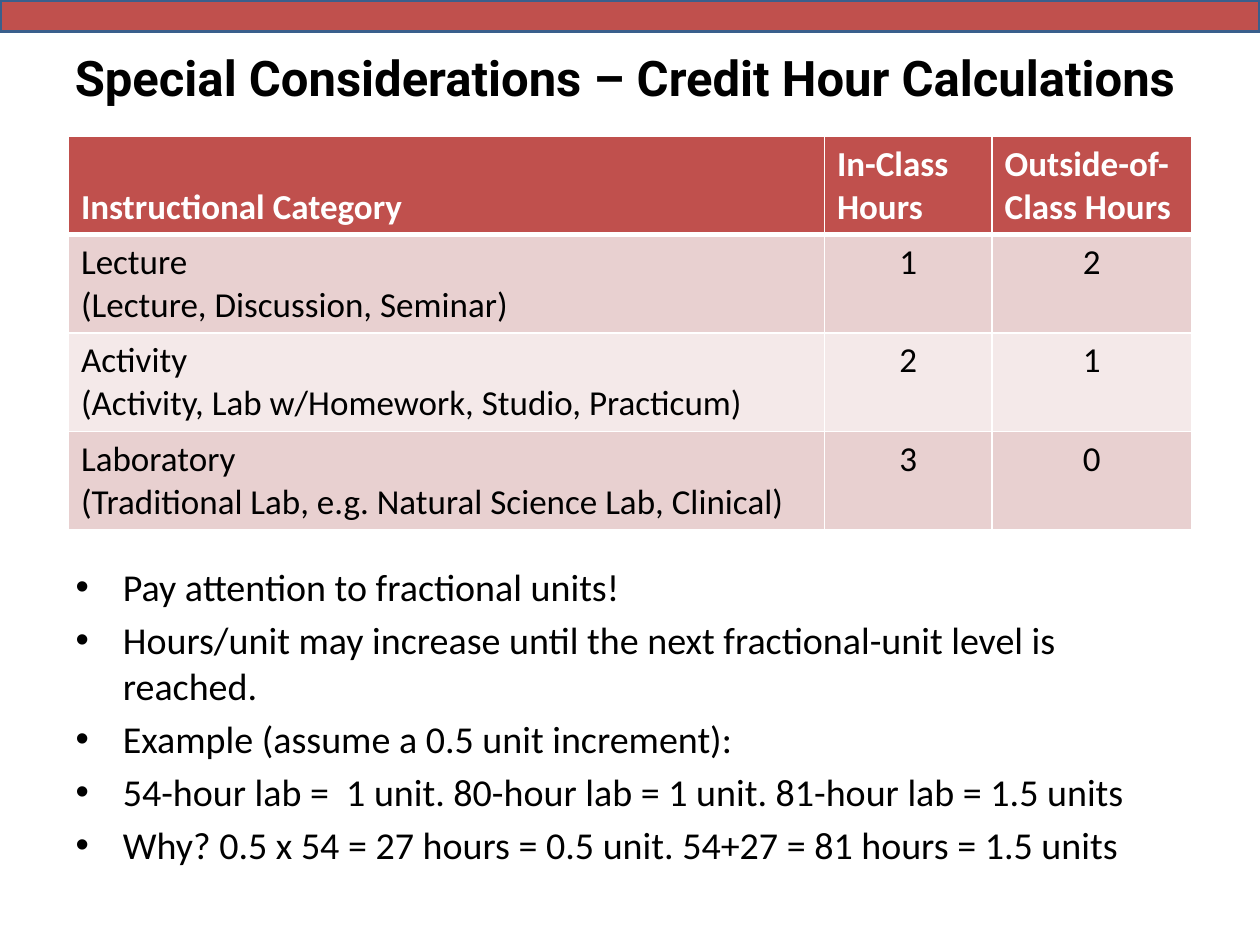
from dataclasses import dataclass

from lxml import etree
from pptx import Presentation
from pptx import util as u
from pptx.dml.color import RGBColor as Rgb
from pptx.enum import shapes, text
from pptx.oxml import ns


@dataclass(frozen=True)
class Theme:
    red: str = "C0504D"
    edge: str = "3A5F8C"
    dark: str = "E8D0D0"
    pale: str = "F4E9E9"
    ink: str = "000000"
    white: str = "FFFFFF"
    head: str = "Roboto"
    font: str = "Calibri"
    title: float = 28
    body: float = 21.7
    cell: float = 20


theme = Theme()


def style(frame, name, size, color, bold=False):
    """Format every run in a text frame."""
    for para in frame.paragraphs:
        for run in para.runs:
            font = run.font
            font.name, font.size, font.bold = name, u.Pt(size), bold
            font.color.rgb = Rgb.from_string(color)


def border(cell, side, width):
    """Draw one white cell edge; side is L, R, T or B."""
    line = etree.SubElement(cell._tc.get_or_add_tcPr(), ns.qn(f"a:ln{side}"),
                            w=str(u.Pt(width)))
    fill = etree.SubElement(line, ns.qn("a:solidFill"))
    etree.SubElement(fill, ns.qn("a:srgbClr"), val=theme.white)


deck = Presentation()
deck.slide_width, deck.slide_height = u.Cm(25.4), u.Cm(19.05)
slide = deck.slides.add_slide(deck.slide_layouts[1])

# Title
title = slide.shapes.title
title.left, title.top = u.Cm(0.43), u.Cm(0.76)
title.width, title.height = u.Cm(24.33), u.Cm(1.57)
frame = title.text_frame
frame.text = "Special Considerations – Credit Hour Calculations"
frame.auto_size = text.MSO_AUTO_SIZE.NONE
frame.vertical_anchor = text.MSO_ANCHOR.MIDDLE
frame.paragraphs[0].alignment = text.PP_ALIGN.CENTER
style(frame, theme.head, theme.title, theme.ink, True)

# Bullet list
notes = [
    "Pay attention to fractional units!",
    "Hours/unit may increase until the next fractional-unit level is reached.",
    "Example (assume a 0.5 unit increment):",
    "54-hour lab =  1 unit. 80-hour lab = 1 unit. 81-hour lab = 1.5 units",
    "Why? 0.5 x 54 = 27 hours = 0.5 unit. 54+27 = 81 hours = 1.5 units",
]
body = slide.placeholders[1]
body.left, body.top = u.Cm(1.27), u.Cm(11.23)
body.width, body.height = u.Cm(22.86), u.Cm(6.55)
frame = body.text_frame
frame.text = "\n".join(notes)
frame.auto_size = text.MSO_AUTO_SIZE.NONE
for i, para in enumerate(frame.paragraphs):
    para.space_before = u.Pt(4.3 if i else 0)
style(frame, theme.font, theme.body, theme.ink)

# Top bar
bar = slide.shapes.add_shape(shapes.MSO_SHAPE.RECTANGLE, 0, 0,
                             deck.slide_width, u.Cm(0.64))
bar.shadow.inherit = False
bar.fill.solid()
bar.fill.fore_color.rgb = Rgb.from_string(theme.red)
bar.line.color.rgb = Rgb.from_string(theme.edge)
bar.line.width = u.Pt(2)

# Hours table
rows = [
    ("Instructional Category", "In-Class Hours", "Outside-of-Class Hours"),
    ("Lecture\n(Lecture, Discussion, Seminar)", "1", "2"),
    ("Activity\n(Activity, Lab w/Homework, Studio, Practicum)", "2", "1"),
    ("Laboratory\n(Traditional Lab, e.g. Natural Science Lab, Clinical)",
     "3", "0"),
]
wide = [15.24, 3.38, 4.02]
high = 1.98
grid = slide.shapes.add_table(len(rows), len(wide), u.Cm(1.38), u.Cm(2.75),
                              u.Cm(sum(wide)), u.Cm(high * len(rows))).table
for col, width in zip(grid.columns, wide):
    col.width = u.Cm(width)
for r, row in enumerate(rows):
    grid.rows[r].height = u.Cm(high)
    for c, words in enumerate(row):
        cell = grid.cell(r, c)
        for side in "LRTB":
            thick = (r, side) in ((0, "B"), (1, "T"))
            border(cell, side, 3 if thick else 1)
        tint = theme.red if r == 0 else theme.dark if r % 2 else theme.pale
        cell.fill.solid()
        cell.fill.fore_color.rgb = Rgb.from_string(tint)
        cell.text_frame.text = words
        if r == 0:
            cell.vertical_anchor = text.MSO_ANCHOR.BOTTOM
        elif c:
            cell.text_frame.paragraphs[0].alignment = text.PP_ALIGN.CENTER
        style(cell.text_frame, theme.font, theme.cell,
              theme.ink if r else theme.white, r == 0)

deck.save("out.pptx")
